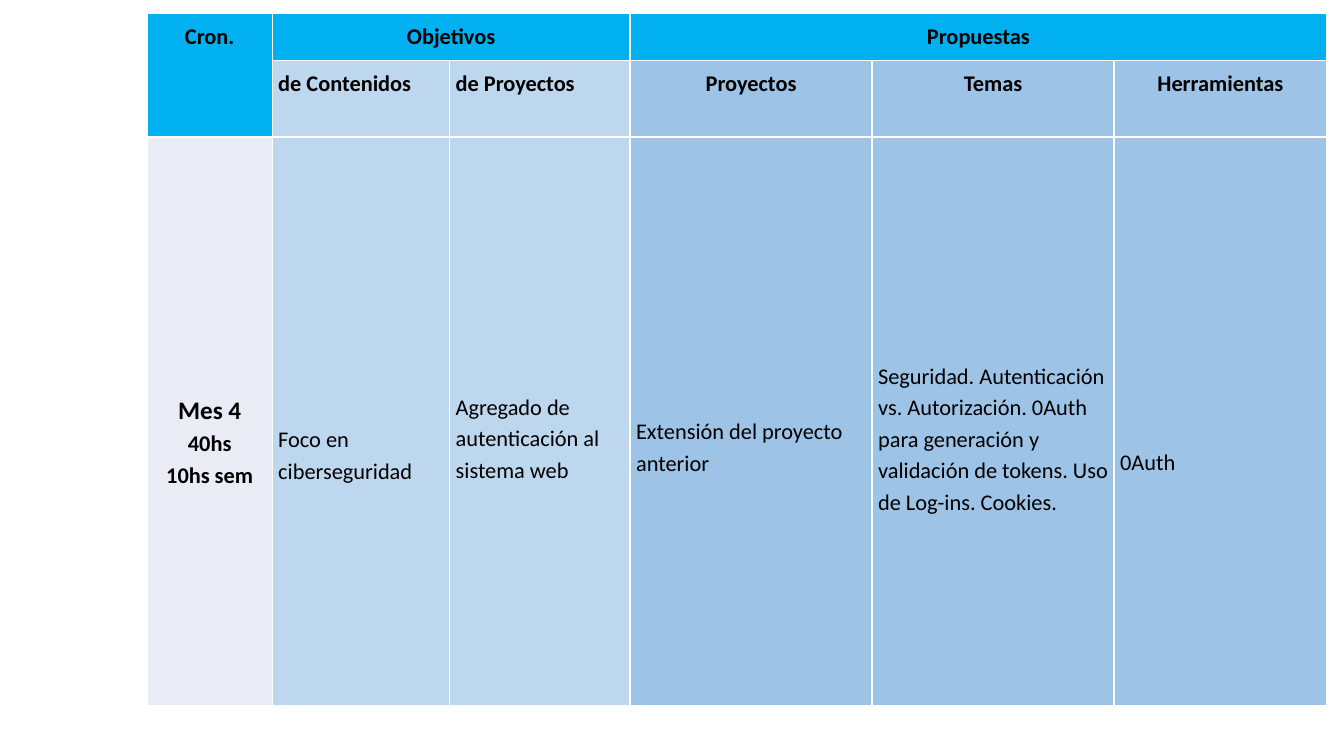
from lxml.etree import SubElement
from pptx import Presentation
from pptx.dml.color import RGBColor
from pptx.enum.text import PP_ALIGN
from pptx.oxml.ns import qn
from pptx.util import Inches, Pt

CYAN = RGBColor(0x00, 0xB0, 0xF0)
PALE_BLUE = RGBColor(0xBD, 0xD7, 0xEE)
MID_BLUE = RGBColor(0x9D, 0xC3, 0xE6)
LAVENDER = RGBColor(0xE9, 0xEB, 0xF5)
BLACK = RGBColor(0x00, 0x00, 0x00)
BORDER_HEX = "FFFFFF"

COLUMN_WIDTHS = [1.24, 1.76, 1.79, 2.4, 2.4, 2.11]
ROW_HEIGHTS = [0.47, 0.76, 5.64]
TABLE_LEFT, TABLE_TOP = 1.46, 0.13
INSET = 0.06

ROW_FILLS = [
    [CYAN] * 6,
    [CYAN] + [PALE_BLUE] * 2 + [MID_BLUE] * 3,
    [LAVENDER] + [PALE_BLUE] * 2 + [MID_BLUE] * 3,
]
MERGES = [((0, 0), (1, 0)), ((0, 1), (0, 2)), ((0, 3), (0, 5))]

HEADING = {"size": Pt(16), "bold": True}
MONTH = {"size": Pt(18), "bold": True}
BODY = {"size": Pt(16), "bold": False}
LEFT, CENTER = PP_ALIGN.LEFT, PP_ALIGN.CENTER

# (row, column): (alignment, top inset, [(text, format), ...])
CELLS = {
    (0, 0): (CENTER, INSET, [("Cron.", HEADING)]),
    (0, 1): (CENTER, INSET, [("Objetivos", HEADING)]),
    (0, 3): (CENTER, INSET, [("Propuestas", HEADING)]),
    (1, 1): (LEFT, INSET, [("de Contenidos", HEADING)]),
    (1, 2): (LEFT, INSET, [("de Proyectos", HEADING)]),
    (1, 3): (CENTER, INSET, [("Proyectos", HEADING)]),
    (1, 4): (CENTER, INSET, [("Temas", HEADING)]),
    (1, 5): (CENTER, INSET, [("Herramientas", HEADING)]),
    (2, 0): (CENTER, 2.52, [("Mes 4", MONTH), ("40hs", HEADING), ("10hs sem", HEADING)]),
    (2, 1): (LEFT, 2.83, [("Foco en ciberseguridad", BODY)]),
    (2, 2): (LEFT, 2.51, [("Agregado de autenticación al sistema web", BODY)]),
    (2, 3): (LEFT, 2.75, [("Extensión del proyecto anterior", BODY)]),
    (2, 4): (LEFT, 2.2, [("Seguridad. Autenticación vs. Autorización. 0Auth para generación "
                          "y validación de tokens. Uso de Log-ins. Cookies.", BODY)]),
    (2, 5): (LEFT, 3.06, [("0Auth", BODY)]),
}


def add_borders(cell):
    properties = cell._tc.get_or_add_tcPr()
    for side in ("a:lnL", "a:lnR", "a:lnT", "a:lnB"):
        line = SubElement(properties, qn(side), w=str(Pt(1)))
        fill = SubElement(line, qn("a:solidFill"))
        SubElement(fill, qn("a:srgbClr"), val=BORDER_HEX)


def write_cell(cell, alignment, top_inset, lines):
    cell.margin_left = cell.margin_right = cell.margin_bottom = Inches(INSET)
    cell.margin_top = Inches(top_inset)
    frame = cell.text_frame
    for index, (text, text_format) in enumerate(lines):
        paragraph = frame.add_paragraph() if index else frame.paragraphs[0]
        paragraph.alignment = alignment
        paragraph.line_spacing = 1.15
        run = paragraph.add_run()
        run.text = text
        run.font.color.rgb = BLACK
        for name, value in {"name": "Calibri", **text_format}.items():
            setattr(run.font, name, value)


def main():
    presentation = Presentation()
    presentation.slide_width, presentation.slide_height = Inches(13.33), Inches(7.5)
    slide = presentation.slides.add_slide(presentation.slide_layouts[6])
    table = slide.shapes.add_table(
        len(ROW_HEIGHTS), len(COLUMN_WIDTHS), Inches(TABLE_LEFT), Inches(TABLE_TOP),
        Inches(sum(COLUMN_WIDTHS)), Inches(sum(ROW_HEIGHTS))).table
    for column, width in zip(table.columns, COLUMN_WIDTHS):
        column.width = Inches(width)
    for row, height in zip(table.rows, ROW_HEIGHTS):
        row.height = Inches(height)

    for row, fills in enumerate(ROW_FILLS):
        for column, color in enumerate(fills):
            cell = table.cell(row, column)
            add_borders(cell)
            cell.fill.solid()
            cell.fill.fore_color.rgb = color
    for first, last in MERGES:
        table.cell(*first).merge(table.cell(*last))
    for position, content in CELLS.items():
        write_cell(table.cell(*position), *content)

    presentation.save("out.pptx")


if __name__ == "__main__":
    main()
